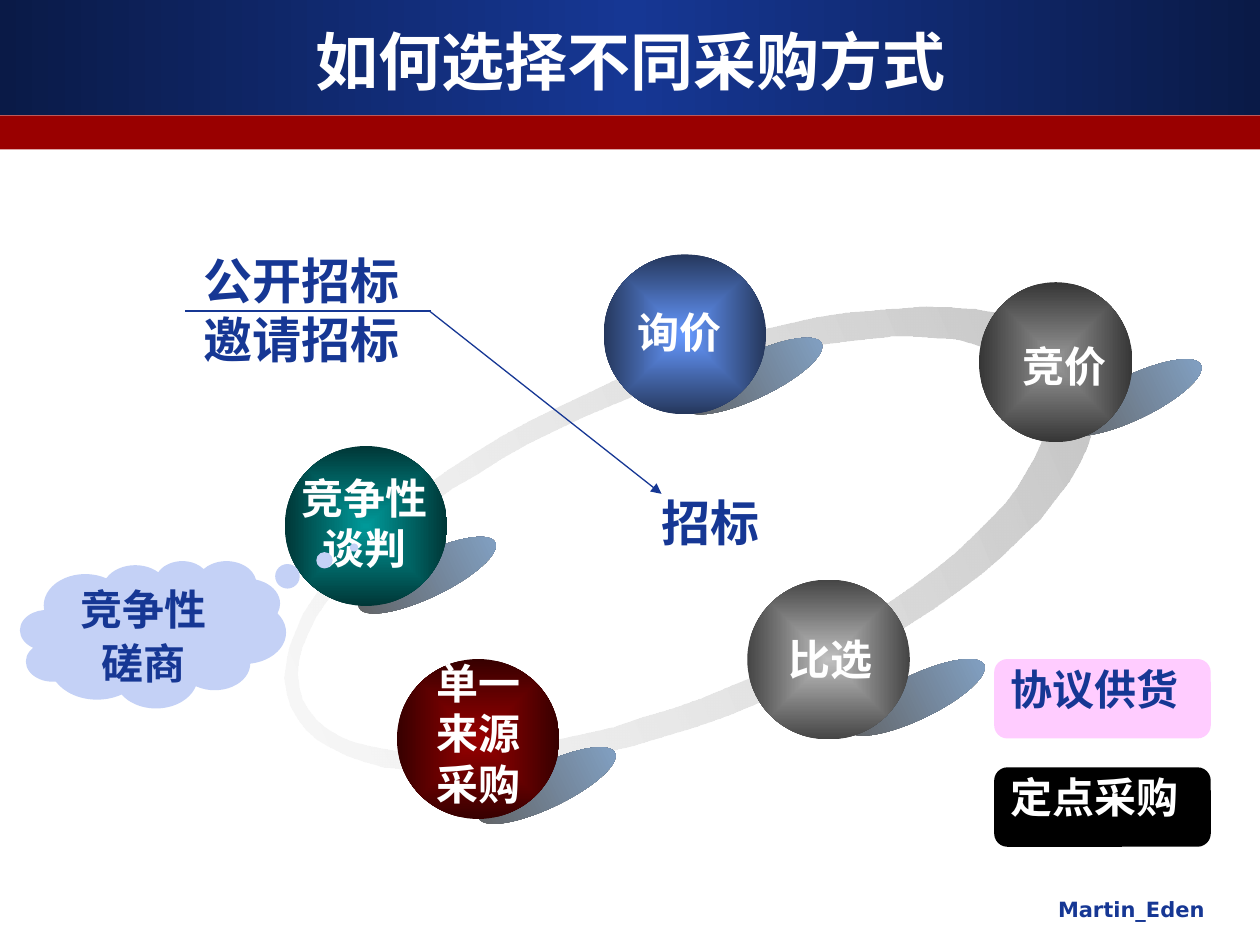
import math
import pptx
import pptx.util
import pptx.dml.color
import pptx.enum.shapes
import pptx.enum.text
import pptx.oxml
import pptx.oxml.ns

Pt = pptx.util.Pt
SHAPE = pptx.enum.shapes.MSO_SHAPE
ALIGN = pptx.enum.text.PP_ALIGN
ANCHOR = pptx.enum.text.MSO_ANCHOR

COLORS = {
    "navy": "163794", "navy_edge": "0A1A47", "crimson": "990000",
    "white": "FFFFFF", "black": "000000", "pink": "FFCCFF", "cloud": "C4D1F6",
    "shadow_dark": "5F5F5F", "shadow_light": "84A5CA",
    "ring_light": "EEEEEE", "ring_dark": "C0C0C0",
    "blue": "6699FF", "blue_edge": "25375C",
    "teal": "009999", "teal_edge": "003737",
    "red": "990000", "red_edge": "370000",
    "silver": "C0C0C0", "silver_edge": "454545",
    "gray": "969696", "gray_edge": "363636",
}

TITLE = "如何选择不同采购方式"
BALLS = [
    ("blue", (344.9, 145.4, 92.9, 91.4), (387.4, 202.3)),
    ("teal", (162.7, 254.9, 92.9, 91.4), (200.9, 316.1)),
    ("red", (226.8, 376.6, 92.9, 91.4), (269.3, 436.3)),
    ("silver", (427, 331.2, 92.9, 91.4), (480.2, 385.9)),
    ("gray", (559.4, 161.3, 87.8, 91.4), (604.1, 214.6)),
]
LABELS = [
    ("竞争性谈判", (163.4, 266.4, 90, 65.5), ALIGN.CENTER),
    ("询价", (357.1, 171.4, 78.5, 36), ALIGN.LEFT),
    ("竞价", (577.4, 190.8, 72, 36), ALIGN.LEFT),
    ("比选", (443.5, 358.6, 71.3, 36), ALIGN.LEFT),
    ("单一来源采购", (242.6, 372.2, 65.5, 93.6), ALIGN.LEFT),
]
HEADINGS = [
    ("招标", (312.5, 277.9, 187.2, 41), ALIGN.CENTER, "Arial"),
    ("公开招标 邀请招标", (109.4, 139.7, 149, 74.9), ALIGN.LEFT, "DejaVu Sans"),
]
FOOTER = ("Martin_Eden", (467.3, 509, 228.2, 25.2))
NOTES = [
    (["竞争性", "磋商"], (11.5, 320.4, 151.9, 84.2), SHAPE.CLOUD_CALLOUT,
     "cloud", "navy", ALIGN.CENTER, (0.756, -0.589)),
    (["定点采购"], (568.1, 438.5, 123.8, 45.4), SHAPE.ROUNDED_RECTANGLE,
     "black", "white", ALIGN.LEFT, ()),
    (["协议供货"], (568.1, 376.6, 123.8, 45.4), SHAPE.ROUNDED_RECTANGLE,
     "pink", "navy", ALIGN.LEFT, ()),
]
LINES = [((245.5, 177.8), (378, 282.2), True), ((246.2, 177.8), (105.8, 177.8), False)]
RING_CENTER = (394.6, 308.2)
RING_ELLIPSES = [(0, 0, 247.7, 100.8, 1), (-11.5, -1.3, 228, 87, -1)]
RING_STEPS = 80
RING_TILT = 337.4
SHADOW_SIZE = (86.4, 25.2)
SHADOW_TILT = 334.3


def rgb(name):
    return pptx.dml.color.RGBColor.from_string(COLORS[name])


def points(values):
    return [Pt(v) for v in values]


def xml(tag, body):
    return pptx.oxml.parse_xml(f"<a:{tag} {pptx.oxml.ns.nsdecls('a')}>{body}</a:{tag}>")


def gradient(shape, stops, direction='<a:lin ang="0" scaled="1"/>'):
    shape.fill.gradient()
    fill = shape._element.spPr.find(pptx.oxml.ns.qn("a:gradFill"))
    fill.clear()
    fill.set("rotWithShape", "1")
    body = ""
    for pos, name, alpha in stops:
        body += (f'<a:gs pos="{pos * 1000}"><a:srgbClr val="{COLORS[name]}">'
                 f'<a:alpha val="{alpha * 1000}"/></a:srgbClr></a:gs>')
    fill.append(xml("gsLst", body))
    fill.append(pptx.oxml.parse_xml(
        direction.replace(" ", " " + pptx.oxml.ns.nsdecls("a") + " ", 1)))


def add_shape(s, kind, box, color=None):
    sp = s.shapes.add_shape(kind, *points(box))
    sp.shadow.inherit = False
    sp.line.fill.background()
    if color:
        sp.fill.solid()
        sp.fill.fore_color.rgb = rgb(color)
    return sp


def write(tf, lines, size, font, color, align, **layout):
    tf.word_wrap = True
    tf.vertical_anchor = layout.pop("anchor", ANCHOR.TOP)
    for i, text in enumerate(lines):
        p = tf.paragraphs[0] if i == 0 else tf.add_paragraph()
        for key, value in {"alignment": align, **layout}.items():
            setattr(p, key, value)
        r = p.add_run()
        r.text = text
        for key, value in {"size": Pt(size), "name": font, "bold": True}.items():
            setattr(r.font, key, value)
        r.font.color.rgb = rgb(color)


def add_text(s, text, box, *style):
    tb = s.shapes.add_textbox(*points(box))
    write(tb.text_frame, [text], *style)


def add_ring(s):
    cx, cy = RING_CENTER
    builder = None
    for dx, dy, rx, ry, turn in RING_ELLIPSES:
        angles = [turn * 2 * math.pi * i / RING_STEPS for i in range(RING_STEPS)]
        pts = [(cx + dx + rx * math.cos(a), cy + dy + ry * math.sin(a)) for a in angles]
        if builder is None:
            builder = s.shapes.build_freeform(*pts[0], scale=Pt(1))
        else:
            builder.move_to(*pts[0])
        builder.add_line_segments(pts[1:], close=True)
    sp = builder.convert_to_shape()
    sp.shadow.inherit = False
    sp.line.fill.background()
    sp.rotation = RING_TILT
    gradient(sp, [(0, "ring_light", 36), (100, "ring_dark", 100)])


def add_line(s, start, end, arrow):
    line = s.shapes.add_connector(
        pptx.enum.shapes.MSO_CONNECTOR.STRAIGHT, *points(start + end))
    line.line.color.rgb = rgb("navy")
    line.line.width = Pt(0.75)
    if arrow:
        tail = xml("tailEnd", "")
        tail.set("type", "triangle")
        line.line._get_or_add_ln().append(tail)
    line._element.spPr.append(xml("effectLst", ""))


def main():
    prs = pptx.Presentation()
    prs.slide_width, prs.slide_height = points((720, 540))
    s = prs.slides.add_slide(prs.slide_layouts[5])

    banner = add_shape(s, SHAPE.RECTANGLE, (0, 0, 720, 65.7))
    gradient(banner, [(0, "navy_edge", 100), (50, "navy", 100), (100, "navy_edge", 100)])
    add_shape(s, SHAPE.RECTANGLE, (0, 66, 720, 19.4), "crimson")

    title = s.shapes.title
    for key, value in zip(("left", "top", "width", "height"), points((0, 12.2, 720, 44.6))):
        setattr(title, key, value)
    write(title.text_frame, [TITLE], 36, "DejaVu Sans", "white", ALIGN.CENTER,
          anchor=ANCHOR.MIDDLE)
    title.text_frame.auto_size = pptx.enum.text.MSO_AUTO_SIZE.NONE
    s.shapes._spTree.append(title._element)

    add_text(s, *FOOTER, 12, "DejaVu Sans", "navy", ALIGN.RIGHT)
    add_ring(s)
    for _, _, corner in BALLS:
        sp = add_shape(s, SHAPE.OVAL, corner + SHADOW_SIZE)
        sp.rotation = SHADOW_TILT
        gradient(sp, [(0, "shadow_dark", 100), (100, "shadow_light", 100)])
    for name, box, _ in BALLS:
        sp = add_shape(s, SHAPE.OVAL, box)
        gradient(sp, [(0, name, 100), (100, name + "_edge", 100)],
                 '<a:path path="shape"><a:fillToRect l="50000" t="50000" '
                 'r="50000" b="50000"/></a:path>')
    for text, box, align in LABELS:
        add_text(s, text, box, 24, "DejaVu Sans", "white", align)
    for text, box, align, font in HEADINGS:
        add_text(s, text, box, 28, font, "navy", align)
    for line in LINES:
        add_line(s, *line)
    for lines, box, kind, fill, color, align, adjust in NOTES:
        sp = add_shape(s, kind, box, fill)
        for i, value in enumerate(adjust):
            sp.adjustments[i] = value
        write(sp.text_frame, lines, 24, "Arial", color, align,
              line_spacing=0.9, space_before=Pt(4.8))
        for p in sp.text_frame.paragraphs:
            pPr = p._p.get_or_add_pPr()
            for key, value in {"marL": Pt(27), "indent": Pt(-27)}.items():
                pPr.set(key, str(value))

    prs.save("out.pptx")


if __name__ == "__main__":
    main()
